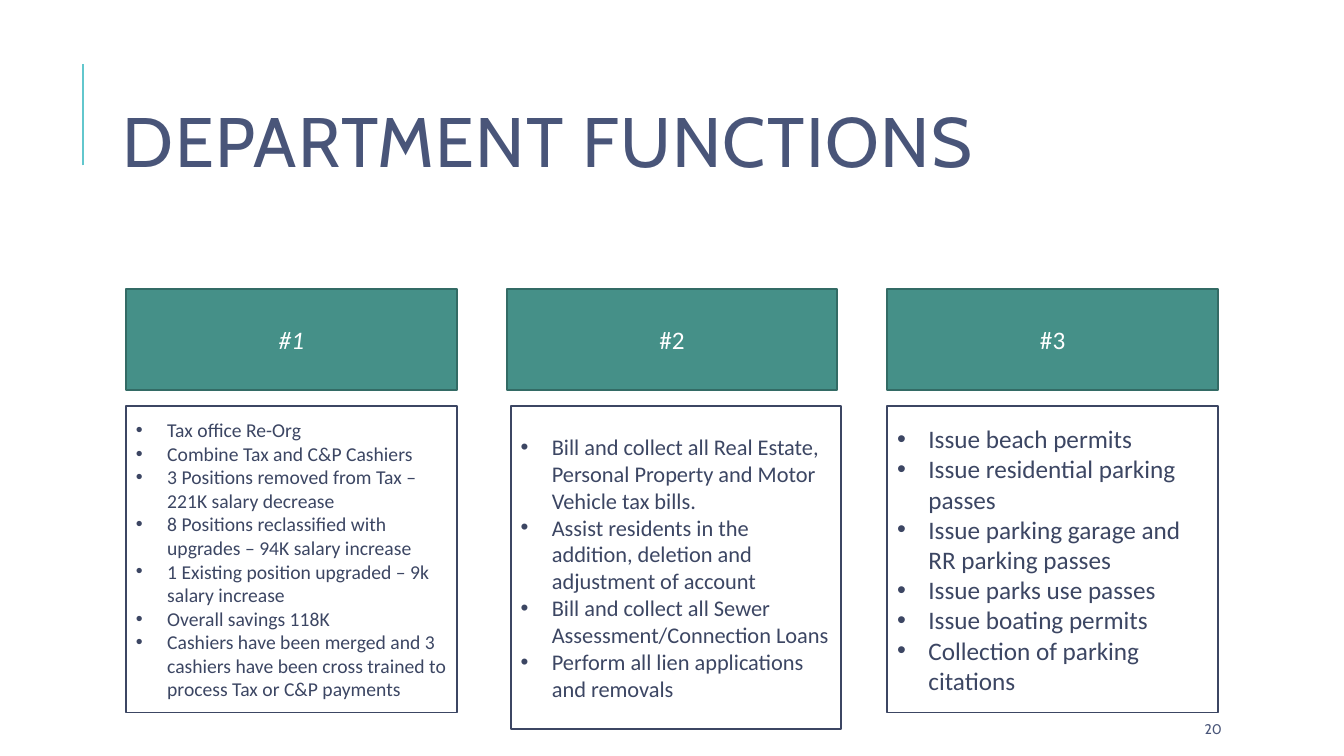
from pptx import Presentation
from pptx.dml.color import RGBColor
from pptx.enum.shapes import MSO_CONNECTOR, MSO_SHAPE
from pptx.enum.text import MSO_ANCHOR, PP_ALIGN
from pptx.oxml.ns import qn
from pptx.util import Inches, Pt
from lxml import etree

COLORS = {"accent": "62C7CD", "title": "495579", "text": "3C4663", "teal": "459088",
          "teal_edge": "336B65", "white": "FFFFFF"}
LEFT, COL_STEP, COL_W = 1.25, 3.775, 3.28
HEAD_TOP, HEAD_H, BODY_TOP = 2.87, 1, 4.03
INDENT = Inches(0.31)

columns = [
    ("#1", 14, 0, 3.04, [
        "Tax office Re-Org",
        "Combine Tax and C&P Cashiers",
        "3 Positions removed from Tax – 221K salary decrease",
        "8 Positions reclassified with upgrades – 94K salary increase",
        "1 Existing position upgraded – 9k salary increase",
        "Overall savings 118K",
        "Cashiers have been merged and 3 cashiers have been cross trained "
        "to process Tax or C&P payments"]),
    ("#2", 16, 0.04, 3.2, [
        "Bill and collect all Real Estate, Personal Property and Motor Vehicle tax bills.",
        "Assist residents in the addition, deletion and adjustment of account",
        "Bill and collect all Sewer Assessment/Connection Loans",
        "Perform all lien applications and removals"]),
    ("#3", 18, 0, 3.04, [
        "Issue beach permits",
        "Issue residential parking passes",
        "Issue parking garage and RR parking passes",
        "Issue parks use passes",
        "Issue boating permits",
        "Collection of parking citations"]),
]


def write(sp, text, size, font, color, align=PP_ALIGN.LEFT):
    tf = sp.text_frame
    tf.text = text
    tf.word_wrap = True
    tf.vertical_anchor = MSO_ANCHOR.MIDDLE
    for p in tf.paragraphs:
        p.alignment = align
        for r in p.runs:
            r.font.size = Pt(size)
            r.font.name = font
            r.font.color.rgb = RGBColor.from_string(COLORS[color])
    return tf


def add_box(s, x, y, h, fill, line):
    sp = s.shapes.add_shape(MSO_SHAPE.RECTANGLE, Inches(x), Inches(y), Inches(COL_W), Inches(h))
    sp.shadow.inherit = False
    sp.fill.solid()
    sp.fill.fore_color.rgb = RGBColor.from_string(COLORS[fill])
    sp.line.color.rgb = RGBColor.from_string(COLORS[line])
    sp.line.width = Pt(1.25)
    return sp


prs = Presentation()
prs.slide_width, prs.slide_height = Inches(13.33), Inches(7.5)
s = prs.slides.add_slide(prs.slide_layouts[6])

rule = s.shapes.add_connector(MSO_CONNECTOR.STRAIGHT, Inches(0.82), Inches(1.64),
                              Inches(0.82), Inches(0.64))
rule.line.color.rgb = RGBColor.from_string(COLORS["accent"])
rule.line.width = Pt(1.5)
etree.SubElement(rule._element.spPr, qn("a:effectLst"))

title = s.shapes.add_textbox(Inches(1.12), Inches(0.64), Inches(10.63), Inches(1.64))
p = write(title, "DEPARTMENT FUNCTIONS", 50, "Cabin", "title").paragraphs[0]
p.line_spacing = 0.8
p.runs[0].font._element.set("spc", "100")

number = s.shapes.add_textbox(Inches(11.85), Inches(7.08), Inches(1.06), Inches(0.3))
write(number, "20", 10, "Cabin", "title")

for i, (label, size, shift, height, items) in enumerate(columns):
    x = LEFT + i * COL_STEP
    head = add_box(s, x, HEAD_TOP, HEAD_H, "teal", "teal_edge")
    tf = write(head, label, 18, "Calibri", "white", PP_ALIGN.CENTER)
    tf.paragraphs[0].runs[0].font.italic = i == 0

    body = add_box(s, x + shift, BODY_TOP, height, "white", "text")
    for p in write(body, "\n".join(items), size, "Calibri", "text").paragraphs:
        pPr = p._p.get_or_add_pPr()
        pPr.set("marL", str(INDENT))
        pPr.set("indent", str(-INDENT))
        etree.SubElement(pPr, qn("a:buFont")).set("typeface", "Arial")
        etree.SubElement(pPr, qn("a:buChar")).set("char", "•")

prs.save("out.pptx")
